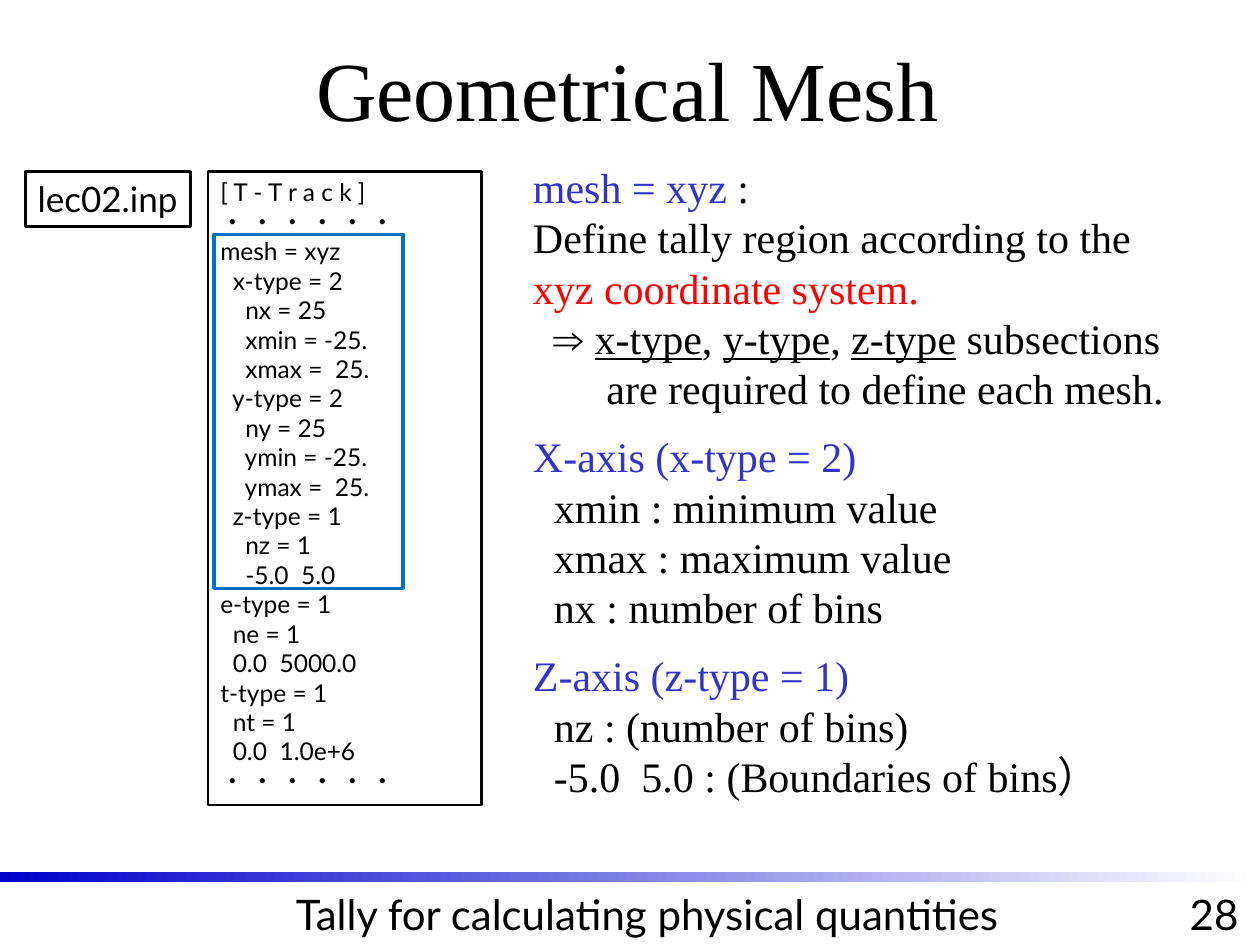
from dataclasses import dataclass
from typing import Optional

from lxml import etree
from pptx import Presentation
from pptx import util as u
from pptx.dml.color import RGBColor
from pptx.enum import shapes, text
from pptx.oxml.ns import qn

BLACK = RGBColor(0x00, 0x00, 0x00)
WHITE = RGBColor(0xFF, 0xFF, 0xFF)
NAVY = RGBColor(0x00, 0x00, 0xCC)
INDIGO = RGBColor(0x33, 0x33, 0xCC)
RED = RGBColor(0xFF, 0x00, 0x00)
BLUE = RGBColor(0x00, 0x70, 0xC0)

SANS = "Lato"
SERIF = "Times New Roman"
COLUMNS, ROWS = 100, 75
LINE_HEIGHT = 1.2
LEFT, CENTER = text.PP_ALIGN.LEFT, text.PP_ALIGN.CENTER


@dataclass(frozen=True)
class Area:
    column: float
    row: float
    columns: float
    rows: float


@dataclass(frozen=True)
class Run:
    words: str
    color: RGBColor = BLACK
    underline: bool = False


@dataclass(frozen=True)
class Line:
    runs: tuple[Run, ...]
    indent: float = 0
    gap: float = 0


@dataclass(frozen=True)
class Style:
    font: str
    size: float
    align: text.PP_ALIGN = LEFT
    anchor: text.MSO_ANCHOR = text.MSO_ANCHOR.TOP
    wrap: bool = True


def plain(words: str, indent: float = 0) -> Line:
    return Line((Run(words),), indent)


def heading(words: str) -> Line:
    return Line((Run(words, INDIGO),), gap=10)


DOTS = "・ ・ ・ ・ ・ ・"
INPUT_FILE = f"""[ T - T r a c k ]
{DOTS}
mesh = xyz
  x-type = 2
    nx = 25
    xmin = -25.
    xmax =  25.
  y-type = 2
    ny = 25
    ymin = -25.
    ymax =  25.
  z-type = 1
    nz = 1
    -5.0  5.0
e-type = 1
  ne = 1
  0.0  5000.0
t-type = 1
  nt = 1
  0.0  1.0e+6
{DOTS}"""

ITEM, CONTINUATION = 12, 42
EXPLANATION = [
    Line((Run("mesh = xyz ", INDIGO), Run(":"))),
    Line((Run("Define tally region according to the "), Run("xyz coordinate system.", RED))),
    Line((
        Run("⇒ "),
        Run("x-type", underline=True), Run(", "),
        Run("y-type", underline=True), Run(", "),
        Run("z-type", underline=True), Run(" subsections"),
    ), ITEM),
    plain("are required to define each mesh.", CONTINUATION),
    heading("X-axis (x-type = 2)"),
    plain("xmin : minimum value", ITEM),
    plain("xmax : maximum value", ITEM),
    plain("nx : number of bins", ITEM),
    heading("Z-axis (z-type = 1)"),
    plain("nz : (number of bins)", ITEM),
    plain("-5.0  5.0 : (Boundaries of bins）", ITEM),
]


def place(presentation, area: Area) -> tuple[int, int, int, int]:
    column = presentation.slide_width / COLUMNS
    row = presentation.slide_height / ROWS
    return (int(area.column * column), int(area.row * row),
            int(area.columns * column), int(area.rows * row))


def move(presentation, shape, area: Area) -> None:
    shape.left, shape.top, shape.width, shape.height = place(presentation, area)


def write(shape, lines: list[Line], style: Style) -> None:
    frame = shape.text_frame
    frame.auto_size = text.MSO_AUTO_SIZE.NONE
    frame.word_wrap = style.wrap
    frame.vertical_anchor = style.anchor
    for index, line in enumerate(lines):
        paragraph = frame.add_paragraph() if index else frame.paragraphs[0]
        properties = paragraph._p.get_or_add_pPr()
        properties.set("marL", str(u.Pt(line.indent)))
        properties.set("indent", "0")
        etree.SubElement(properties, qn("a:buNone"))
        paragraph.alignment = style.align
        paragraph.line_spacing = u.Pt(style.size * LINE_HEIGHT)
        paragraph.space_before = u.Pt(line.gap)
        for part in line.runs:
            run = paragraph.add_run()
            run.text = part.words
            run.font.name = style.font
            run.font.size = u.Pt(style.size)
            run.font.color.rgb = part.color
            run.font.underline = part.underline


def add_box(presentation, slide, area: Area, outline: Optional[RGBColor] = None,
            width: float = 1.5, fill: Optional[RGBColor] = None):
    shape = slide.shapes.add_shape(shapes.MSO_SHAPE.RECTANGLE, *place(presentation, area))
    shape.shadow.inherit = False
    if fill is None:
        shape.fill.background()
    else:
        shape.fill.solid()
        shape.fill.fore_color.rgb = fill
    if outline is None:
        shape.line.fill.background()
    else:
        shape.line.color.rgb = outline
        shape.line.width = u.Pt(width)
    return shape


def add_footer(presentation, slide, area: Area, words: str) -> None:
    shape = slide.shapes.add_textbox(*place(presentation, area))
    write(shape, [plain(words)], Style(SANS, 24, CENTER))


def main() -> None:
    presentation = Presentation()
    presentation.slide_width, presentation.slide_height = u.Inches(10), u.Inches(7.5)
    slide = presentation.slides.add_slide(presentation.slide_layouts[1])

    rule = add_box(presentation, slide, Area(0, 69.2, 99.6, 0.8))
    rule.fill.gradient()
    rule.fill.gradient_angle = 0
    for stop, color in zip(rule.fill.gradient_stops, (NAVY, WHITE)):
        stop.color.rgb = color
    add_footer(presentation, slide, Area(92.4, 70, 7.9, 5), "28")
    add_footer(presentation, slide, Area(21.2, 70, 60.3, 5), "Tally for calculating physical quantities")

    title, body = slide.shapes.title, slide.placeholders[1]
    move(presentation, title, Area(2.3, 2.1, 95, 9.8))
    write(title, [plain("Geometrical Mesh")],
          Style(SERIF, 48, CENTER, text.MSO_ANCHOR.MIDDLE))
    move(presentation, body, Area(41.3, 12.3, 54.3, 52.2))
    write(body, EXPLANATION, Style(SERIF, 24))

    listing = add_box(presentation, slide, Area(16.5, 13.6, 21.7, 50.3), BLACK, fill=WHITE)
    write(listing, [plain(row) for row in INPUT_FILE.splitlines()], Style(SANS, 14))
    add_box(presentation, slide, Area(17, 18.6, 15, 28.1), BLUE, 2)
    file_name = add_box(presentation, slide, Area(2, 13.6, 13.1, 4.4), BLACK)
    write(file_name, [plain("lec02.inp")], Style(SANS, 20, wrap=False))

    presentation.save("out.pptx")


if __name__ == "__main__":
    main()
